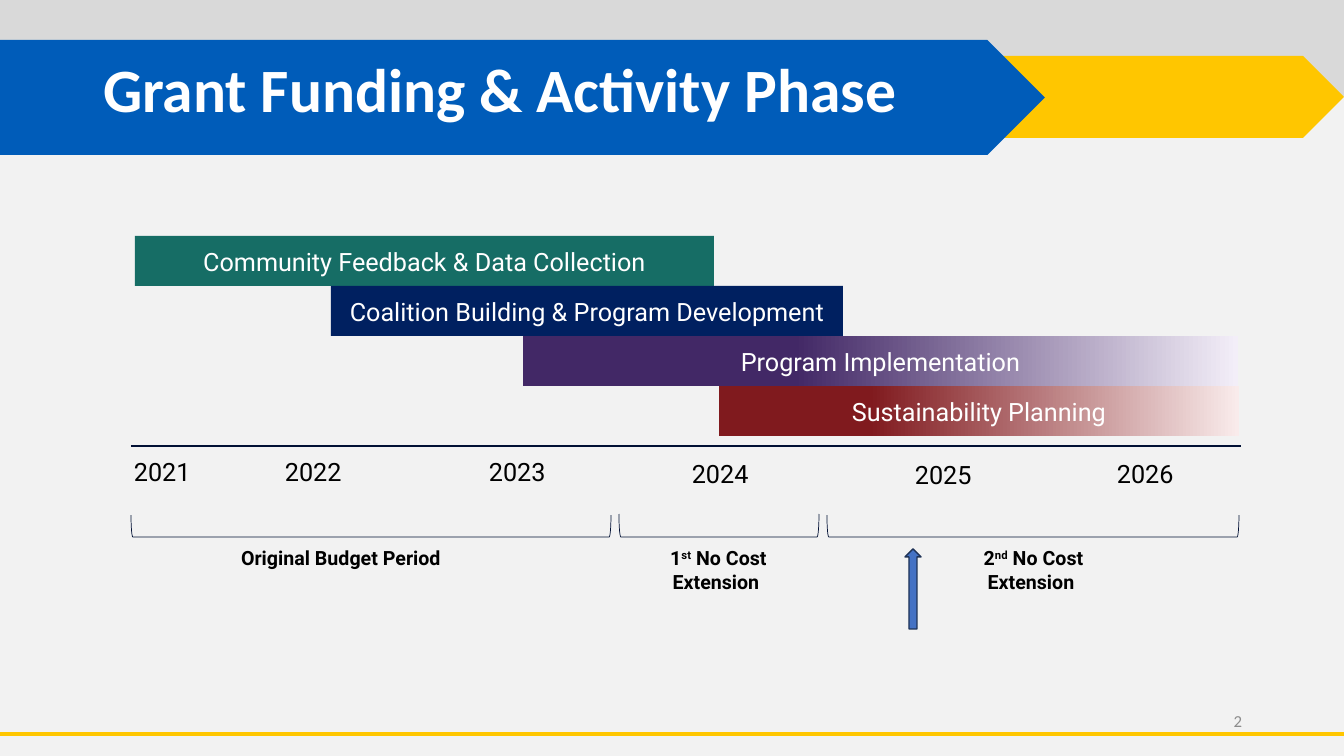
"""Build a slide that sets grant activity phases against a funding timeline."""
from lxml import etree
from pptx import Presentation
from pptx.dml.color import RGBColor
from pptx.enum.shapes import MSO_CONNECTOR, MSO_SHAPE
from pptx.enum.text import MSO_ANCHOR, PP_ALIGN
from pptx.oxml.ns import qn
from pptx.util import Pt

SCALE = 914400 / 100.8
RECTANGLE, PENTAGON = MSO_SHAPE.RECTANGLE, MSO_SHAPE.PENTAGON
BRACKET, UP_ARROW = MSO_SHAPE.LEFT_BRACKET, MSO_SHAPE.UP_ARROW
STRAIGHT = MSO_CONNECTOR.STRAIGHT
TOP, MIDDLE = MSO_ANCHOR.TOP, MSO_ANCHOR.MIDDLE
LEFT, CENTER, RIGHT = PP_ALIGN.LEFT, PP_ALIGN.CENTER, PP_ALIGN.RIGHT

COLORS = {
    "page": "F2F2F2", "band": "D9D9D9", "gold": "FFC600", "blue": "005CB9",
    "white": "FFFFFF", "black": "000000", "gray": "8C8C8C", "ink": "011034",
    "green": "166D65", "navy": "002060", "purple": "422866", "lilac": "F3EEF8",
    "maroon": "801A1E", "blush": "F9EBEB", "arrow": "4472C4", "arrow edge": "1E3256",
}
BANNER = [
    (RECTANGLE, (0, 0, 1344, 96), "band"),
    (PENTAGON, (714, 56, 630, 82), "gold"),
    (PENTAGON, (0, 40, 1045, 115), "blue"),
]
PHASES = [
    ("Community Feedback & Data Collection", 135, 579, "green", None),
    ("Coalition Building & Program Development", 331, 512, "navy", None),
    ("Program Implementation", 523, 715, "purple", ("lilac", 0.38)),
    ("Sustainability Planning", 719, 520, "maroon", ("blush", 0.29)),
]
PHASE_TOP, PHASE_HEIGHT = 236, 50
YEARS = [(2021, 124, 451), (2022, 275, 451), (2023, 479, 451),
         (2024, 682, 453), (2025, 905, 454), (2026, 1107, 453)]
PERIODS = [
    ((131, 515, 480, 22), (226, 541, 230, 34), [("Original Budget Period", 0)]),
    ((619, 514, 200, 23), (651, 541, 135, 59),
     [("1", 0), ("st", 30), (" No Cost Extension ", 0)]),
    ((827, 515, 412, 22), (966, 541, 135, 59),
     [("2", 0), ("nd", 30), (" No Cost Extension ", 0)]),
]


def px(length):
    """Turn px into EMU."""
    return round(length * SCALE)


def rgb(name):
    """Look up a named color."""
    return RGBColor.from_string(COLORS[name])


def write(shape, spans, size, color, font="Roboto", bold=False, align=LEFT, anchor=TOP):
    """Write one paragraph of (text, baseline) spans into a shape."""
    frame = shape.text_frame
    frame.word_wrap = True
    frame.vertical_anchor = anchor
    para = frame.paragraphs[0]
    para.alignment = align
    for text, baseline in spans:
        span = para.add_run()
        span.text = text
        span.font.name = font
        span.font.size = Pt(size)
        span.font.bold = bold
        span.font.color.rgb = rgb(color)
        if baseline:
            span.font._element.set("baseline", str(baseline * 1000))
    return para


def add_block(page, kind, box, fill=None, line=None, weight=1):
    """Add a preset shape with a plain fill and outline."""
    shape = page.shapes.add_shape(kind, *map(px, box))
    shape.shadow.inherit = False
    if fill:
        shape.fill.solid()
        shape.fill.fore_color.rgb = rgb(fill)
    else:
        shape.fill.background()
    if line:
        shape.line.color.rgb = rgb(line)
        shape.line.width = Pt(weight)
    else:
        shape.line.fill.background()
    return shape


def add_label(page, box, spans, size, color, **style):
    """Add a text box."""
    label = page.shapes.add_textbox(*map(px, box))
    write(label, spans, size, color, **style)


def add_rule(page, left, right, top, color, weight):
    """Add a horizontal line."""
    rule = page.shapes.add_connector(STRAIGHT, px(left), px(top), px(right), px(top))
    rule.line.color.rgb = rgb(color)
    rule.line.width = Pt(weight)
    etree.SubElement(rule._element.spPr, qn("a:effectLst"))


def add_phase(page, row, name, left, width, color, fade):
    """Add a phase bar, fading to the right when a fade is given."""
    box = (left, PHASE_TOP + row * PHASE_HEIGHT, width, PHASE_HEIGHT)
    bar = add_block(page, RECTANGLE, box, color)
    if fade:
        end_color, start = fade
        bar.fill.gradient()
        bar.fill.gradient_angle = 0
        stops = [(color, start), (end_color, 1)]
        for stop, (stop_color, position) in zip(bar.fill.gradient_stops, stops):
            stop.color.rgb = rgb(stop_color)
            stop.position = position
    write(bar, [(name, 0)], 18, "white", align=CENTER, anchor=MIDDLE)


def add_bracket(page, left, top, width, height):
    """Add a bracket that opens upward over the given area."""
    shift = (width - height) / 2
    box = (left + shift, top - shift, height, width)
    bracket = add_block(page, BRACKET, box, line="ink", weight=0.5)
    bracket.rotation = 270


def set_title(page, text):
    """Place the title in front of the banner."""
    title = page.shapes.title
    title.left, title.top, title.width, title.height = map(px, (93, 20, 1159, 146))
    para = write(title, [(text, 0)], 44, "white", font="Calibri", bold=True, anchor=MIDDLE)
    para.line_spacing = 0.9
    page.shapes._spTree.append(title._element)


def main():
    """Build and save the deck."""
    deck = Presentation()
    deck.slide_width, deck.slide_height = px(1344), px(756)
    page = deck.slides.add_slide(deck.slide_layouts[5])
    page.background.fill.solid()
    page.background.fill.fore_color.rgb = rgb("page")

    for kind, box, color in BANNER:
        add_block(page, kind, box, color)
    add_rule(page, 0, 1344, 734, "gold", 3)
    set_title(page, "Grant Funding & Activity Phase")
    add_label(page, (950, 701, 302, 40), [("2", 0)], 12, "gray",
              font="Calibri", align=RIGHT, anchor=MIDDLE)

    for row, phase in enumerate(PHASES):
        add_phase(page, row, *phase)
    add_rule(page, 131, 1241, 446, "ink", 1.5)
    for year, left, top in YEARS:
        add_label(page, (left, top, 132, 49), [(str(year), 0)], 18, "black")
    for bracket_box, label_box, spans in PERIODS:
        add_bracket(page, *bracket_box)
        add_label(page, label_box, spans, 14, "black", bold=True, align=CENTER)
    add_block(page, UP_ARROW, (905, 549, 16, 80), "arrow", "arrow edge")
    deck.save("out.pptx")


if __name__ == "__main__":
    main()
